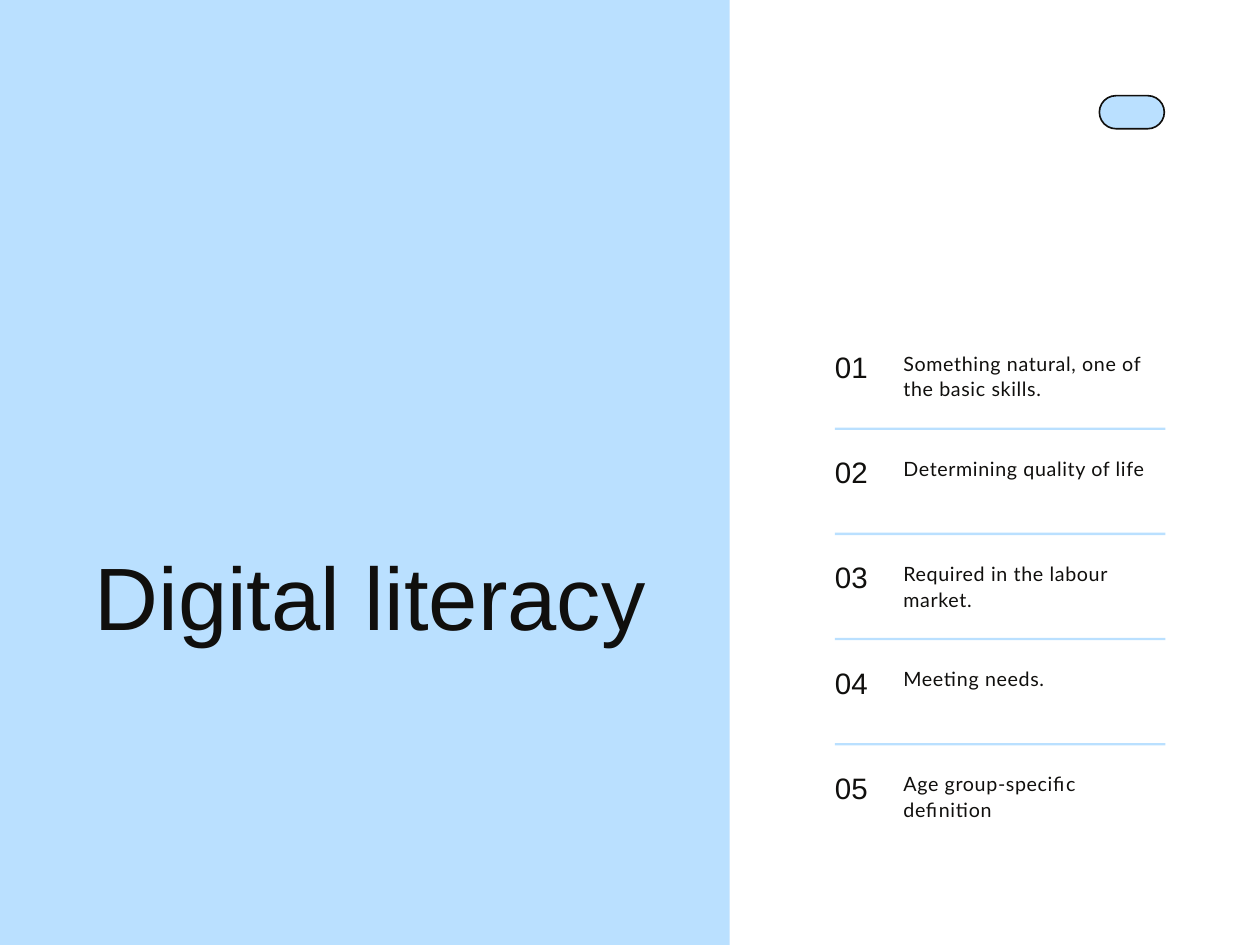
from dataclasses import dataclass

from pptx import Presentation
from pptx.dml.color import RGBColor
from pptx.enum.shapes import MSO_SHAPE
from pptx.enum.text import MSO_ANCHOR, MSO_AUTO_SIZE, PP_ALIGN
from pptx.util import Inches, Pt

RECTANGLE = MSO_SHAPE.RECTANGLE
PILL = MSO_SHAPE.ROUNDED_RECTANGLE
TOP = MSO_ANCHOR.TOP
LEFT = PP_ALIGN.LEFT
NO_AUTOFIT = MSO_AUTO_SIZE.NONE
TITLE_ONLY = 5

TITLE = "Digital literacy"
POINTS = [
    "Something natural, one of the basic skills.",
    "Determining quality of life",
    "Required in the labour market.",
    "Meeting needs.",
    "Age group-specific definition",
]


@dataclass(frozen=True)
class TextStyle:
    font: str
    size: float
    line_spacing: float
    tracking: int = 0  # hundredths of a point


@dataclass(frozen=True)
class Theme:
    blue: RGBColor = RGBColor(0xBA, 0xE0, 0xFF)
    ink: RGBColor = RGBColor(0x10, 0x0F, 0x0D)
    title: TextStyle = TextStyle("Arial", 54, 59.4)
    number: TextStyle = TextStyle("Arial", 18, 19.8)
    body: TextStyle = TextStyle("Lato", 12, 15.6, 40)


THEME = Theme()

LIST_LEFT, LIST_WIDTH = 7.07, 2.8
BODY_LEFT = 7.65
NUMBER_TOP, BODY_TOP, RULE_TOP = 2.98, 2.96, 3.62
ROW_PITCH = 0.89


def place(shape, left, top, width, height):
    shape.left, shape.top = Inches(left), Inches(top)
    shape.width, shape.height = Inches(width), Inches(height)


def set_text(shape, text, style):
    frame = shape.text_frame
    frame.text = text
    frame.word_wrap = True
    frame.auto_size = NO_AUTOFIT
    frame.vertical_anchor = TOP
    frame.margin_left = frame.margin_right = 0
    frame.margin_top = frame.margin_bottom = 0
    paragraph = frame.paragraphs[0]
    paragraph.alignment = LEFT
    paragraph.line_spacing = Pt(style.line_spacing)
    run = paragraph.runs[0]
    run.font.name = style.font
    run.font.size = Pt(style.size)
    run.font.color.rgb = THEME.ink
    if style.tracking:
        run.font._element.set("spc", str(style.tracking))


def add_text(slide, text, style, left, top, width, height):
    box = slide.shapes.add_textbox(
        Inches(left), Inches(top), Inches(width), Inches(height))
    set_text(box, text, style)


def add_blue_shape(slide, kind, left, top, width, height):
    shape = slide.shapes.add_shape(
        kind, Inches(left), Inches(top), Inches(width), Inches(height))
    shape.shadow.inherit = False
    shape.fill.solid()
    shape.fill.fore_color.rgb = THEME.blue
    shape.line.fill.background()
    return shape


def add_title(slide):
    title = slide.shapes.title
    place(title, 0.8, 4.66, 4.78, 1.65)
    set_text(title, TITLE, THEME.title)
    # Bring the title in front of the panel
    slide.shapes._spTree.append(title._element)


def add_pill(slide):
    pill = add_blue_shape(slide, PILL, 9.31, 0.81, 0.55, 0.28)
    pill.adjustments[0] = 0.5
    pill.line.color.rgb = THEME.ink
    pill.line.width = Pt(1)


def add_points(slide):
    for index, point in enumerate(POINTS):
        offset = index * ROW_PITCH
        add_text(slide, f"{index + 1:02}", THEME.number,
                 LIST_LEFT, NUMBER_TOP + offset, 0.47, 0.29)
        add_text(slide, point, THEME.body,
                 BODY_LEFT, BODY_TOP + offset, 2.22, 0.43)
        if index < len(POINTS) - 1:
            add_blue_shape(slide, RECTANGLE, LIST_LEFT, RULE_TOP + offset,
                           LIST_WIDTH, 0.02)


def main():
    presentation = Presentation()
    presentation.slide_width = Inches(10.67)
    presentation.slide_height = Inches(8)
    slide = presentation.slides.add_slide(
        presentation.slide_layouts[TITLE_ONLY])
    add_blue_shape(slide, RECTANGLE, 0, 0, 6.18, 8)
    add_title(slide)
    add_pill(slide)
    add_points(slide)
    presentation.save("out.pptx")


if __name__ == "__main__":
    main()
